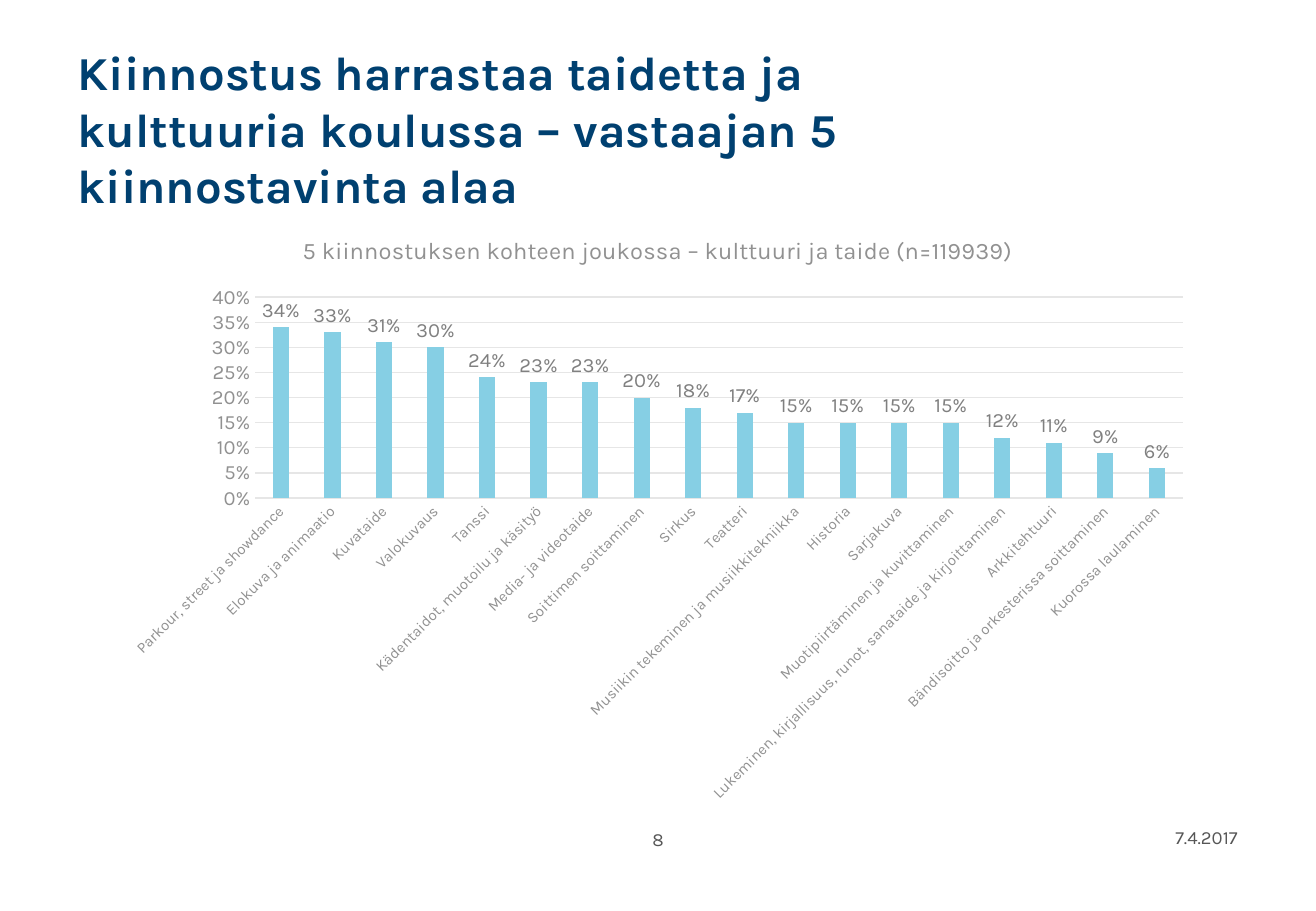
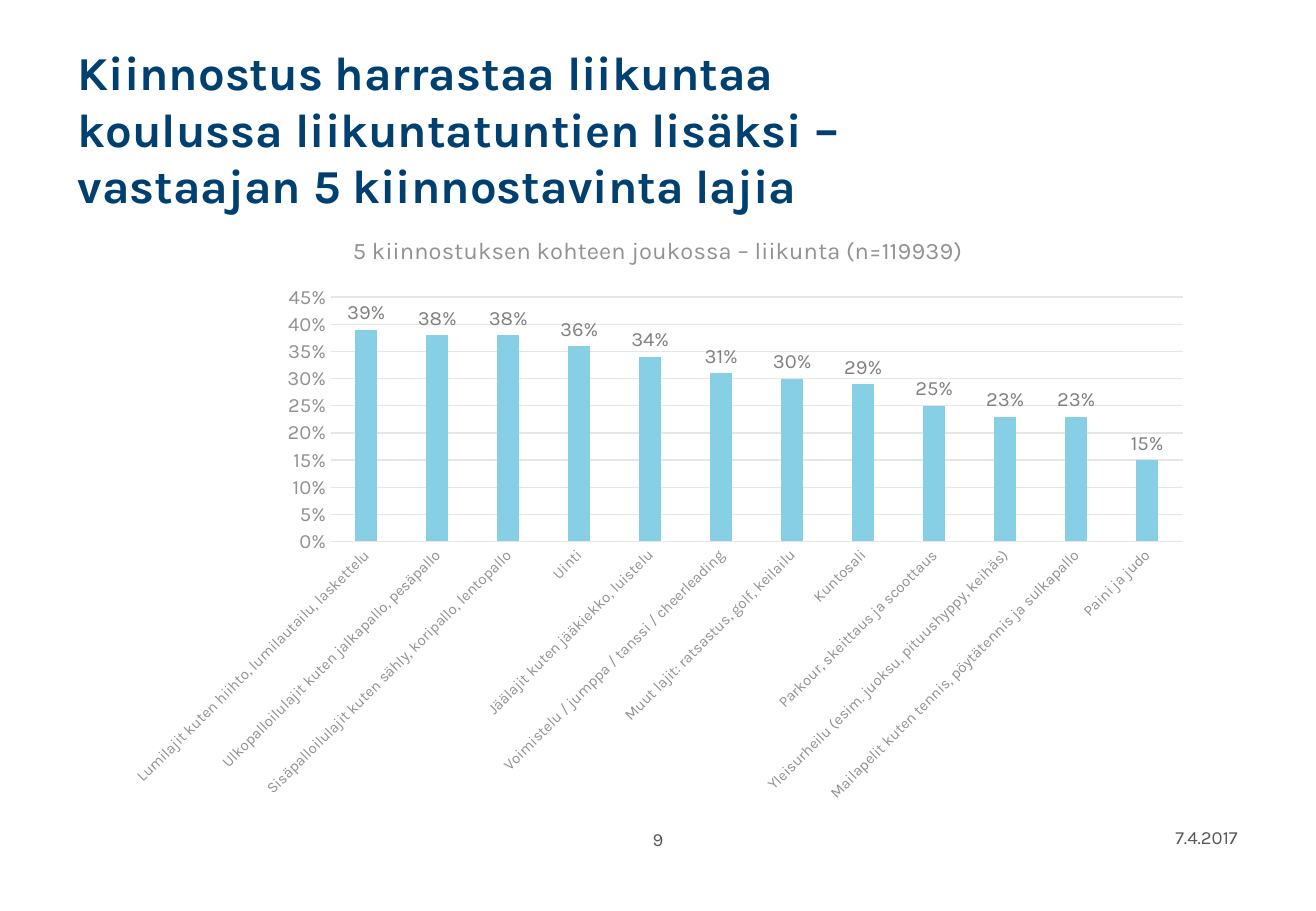
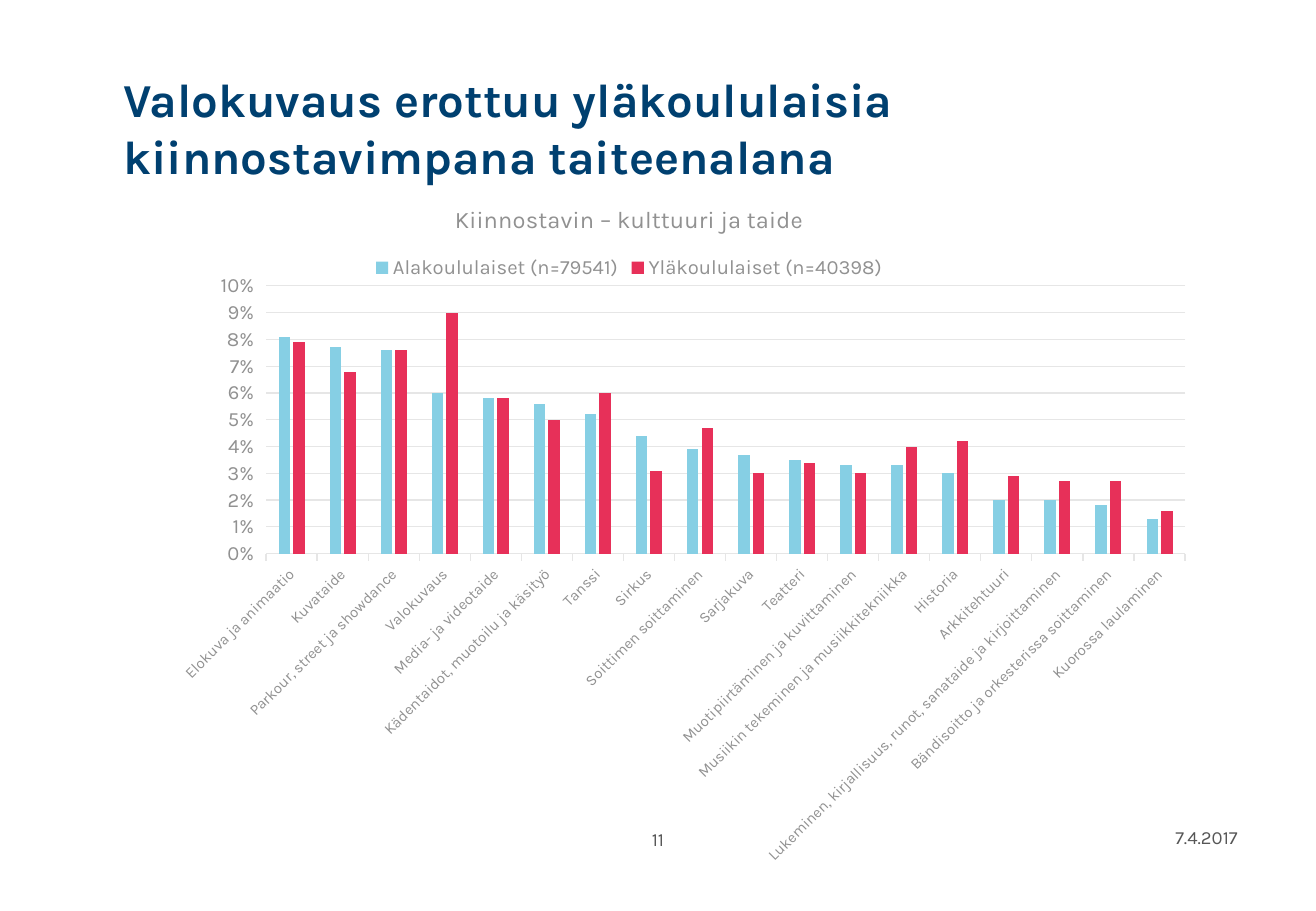
"""Build three slides of column charts on pupils' interest in culture, arts and sports."""
import pptx
import pptx.chart.data
import pptx.dml.color
import pptx.enum.chart
import pptx.enum.text
import pptx.oxml
import pptx.oxml.ns
import pptx.util

Pt = pptx.util.Pt
XL = pptx.enum.chart
ALIGN = pptx.enum.text.PP_ALIGN
ANCHOR = pptx.enum.text.MSO_ANCHOR

FONT = "Karla"
NAVY, TEXT, AXIS, LABEL, GRID = "004070", "565656", "919191", "808080", "E6E6E6"
SERIES_COLORS = ["86CFE4", "E73059"]
DATE = "7.4.2017"
PAGE_BOX = (299, 487.4, 182, 29)
DATE_BOX = (558.7, 486, 182, 29)

SLIDES = [
    {
        "title": "Kiinnostus harrastaa taidetta ja kulttuuria koulussa – vastaajan 5 kiinnostavinta alaa",
        "title_box": (39, 31, 546, 90),
        "page": "8",
        "chart_title": "5 kiinnostuksen kohteen joukossa – kulttuuri ja taide (n=119939)",
        "chart_box": (66, 126, 648, 356.4),
        "top": 0.4,
        "step": 0.05,
        "series": ["Osuus"],
        "rows": [
            ("Parkour, street ja showdance", 0.34),
            ("Elokuva ja animaatio", 0.33),
            ("Kuvataide", 0.31),
            ("Valokuvaus", 0.3),
            ("Tanssi", 0.24),
            ("Kädentaidot, muotoilu ja käsityö", 0.23),
            ("Media- ja videotaide", 0.23),
            ("Soittimen soittaminen", 0.2),
            ("Sirkus", 0.18),
            ("Teatteri", 0.17),
            ("Musiikin tekeminen ja musiikkitekniikka", 0.15),
            ("Historia", 0.15),
            ("Sarjakuva", 0.15),
            ("Muotipiirtäminen ja kuvittaminen", 0.15),
            ("Lukeminen, kirjallisuus, runot, sanataide ja kirjoittaminen", 0.12),
            ("Arkkitehtuuri", 0.11),
            ("Bändisoitto ja orkesterissa soittaminen", 0.09),
            ("Kuorossa laulaminen", 0.06),
        ],
    },
    {
        "title": "Kiinnostus harrastaa liikuntaa koulussa liikuntatuntien lisäksi – vastaajan 5 kiinnostavinta lajia",
        "title_box": (39, 31, 546, 90),
        "page": "9",
        "chart_title": "5 kiinnostuksen kohteen joukossa – liikunta (n=119939)",
        "chart_box": (66, 126, 648, 356.4),
        "top": 0.45,
        "step": 0.05,
        "series": ["Osuus"],
        "rows": [
            ("Lumilajit kuten hiihto, lumilautailu, laskettelu", 0.39),
            ("Ulkopalloilulajit kuten jalkapallo, pesäpallo", 0.38),
            ("Sisäpalloilulajit kuten sähly, koripallo, lentopallo", 0.38),
            ("Uinti", 0.36),
            ("Jäälajit kuten jääkiekko, luistelu", 0.34),
            ("Voimistelu / jumppa / tanssi / cheerleading", 0.31),
            ("Muut lajit: ratsastus, golf, keilailu", 0.3),
            ("Kuntosali", 0.29),
            ("Parkour, skeittaus ja scoottaus", 0.25),
            ("Yleisurheilu (esim. juoksu, pituushyppy, keihäs)", 0.23),
            ("Mailapelit kuten tennis, pöytätennis ja sulkapallo", 0.23),
            ("Paini ja judo", 0.15),
        ],
    },
    {
        "title": "Valokuvaus erottuu yläkoululaisia kiinnostavimpana taiteenalana",
        "title_box": (66, 30.2, 504, 90),
        "page": "11",
        "chart_title": "Kiinnostavin – kulttuuri ja taide",
        "chart_box": (32.4, 106.6, 681, 408.2),
        "plot_area": {"x": 0.184, "y": 0.154, "w": 0.8, "h": 0.389},
        "top": 0.1,
        "step": 0.01,
        "series": ["Alakoululaiset (n=79541)", "Yläkoululaiset (n=40398)"],
        "rows": [
            ("Elokuva ja animaatio", 0.081, 0.079),
            ("Kuvataide", 0.077, 0.068),
            ("Parkour, street ja showdance", 0.076, 0.076),
            ("Valokuvaus", 0.06, 0.09),
            ("Media- ja videotaide", 0.058, 0.058),
            ("Kädentaidot, muotoilu ja käsityö", 0.056, 0.05),
            ("Tanssi", 0.052, 0.06),
            ("Sirkus", 0.044, 0.031),
            ("Soittimen soittaminen", 0.039, 0.047),
            ("Sarjakuva", 0.037, 0.03),
            ("Teatteri", 0.035, 0.034),
            ("Muotipiirtäminen ja kuvittaminen", 0.033, 0.03),
            ("Musiikin tekeminen ja musiikkitekniikka", 0.033, 0.04),
            ("Historia", 0.03, 0.042),
            ("Arkkitehtuuri", 0.02, 0.029),
            ("Lukeminen, kirjallisuus, runot, sanataide ja kirjoittaminen", 0.02, 0.027),
            ("Bändisoitto ja orkesterissa soittaminen", 0.018, 0.027),
            ("Kuorossa laulaminen", 0.013, 0.016),
        ],
    },
]


def rgb(color):
    return pptx.dml.color.RGBColor.from_string(color)


def set_font(font, size, color, bold=False):
    font.name, font.size, font.bold = FONT, Pt(size), bold
    font.color.rgb = rgb(color)


def set_line(line, color):
    line.color.rgb = rgb(color)
    line.width = Pt(0.75)


def add_text(s, box, text, size, color, align=ALIGN.LEFT, anchor=ANCHOR.TOP, bold=False):
    tf = s.shapes.add_textbox(*map(Pt, box)).text_frame
    tf.word_wrap = True
    tf.vertical_anchor = anchor
    tf.text = text
    p = tf.paragraphs[0]
    p.alignment = align
    set_font(p.runs[0].font, size, color, bold)


def place_plot(chart, area):
    plot_area = chart.element.xpath("c:chart/c:plotArea")[0]
    for layout in plot_area.xpath("c:layout"):
        plot_area.remove(layout)
    parts = '<c:layoutTarget val="inner"/><c:xMode val="edge"/><c:yMode val="edge"/>'
    parts += "".join(f'<c:{name} val="{value}"/>' for name, value in area.items())
    plot_area.insert(0, pptx.oxml.parse_xml(
        f'<c:layout {pptx.oxml.ns.nsdecls("c")}><c:manualLayout>{parts}</c:manualLayout></c:layout>'))


def style_axes(chart, top, step, tick):
    cat, val = chart.category_axis, chart.value_axis
    for axis, size in ((cat, 9), (val, 12)):
        axis.major_tick_mark = tick
        axis.minor_tick_mark = XL.XL_TICK_MARK.NONE
        set_font(axis.tick_labels.font, size, AXIS)
    cat.has_major_gridlines = False
    set_line(cat.format.line, GRID)
    for body in chart.element.xpath(".//c:catAx/c:txPr/a:bodyPr"):
        body.set("rot", "-2700000")
        body.set("vert", "horz")
    val.minimum_scale, val.maximum_scale, val.major_unit = 0, top, step
    val.tick_labels.number_format = "0%"
    val.tick_labels.number_format_is_linked = False
    val.format.line.fill.background()
    val.has_major_gridlines = True
    set_line(val.major_gridlines.format.line, GRID)


def add_columns(s, content):
    names, columns = content["series"], list(zip(*content["rows"]))
    data = pptx.chart.data.CategoryChartData(number_format="0%")
    data.categories = columns[0]
    for name, values in zip(names, columns[1:]):
        data.add_series(name, values)
    chart = s.shapes.add_chart(
        XL.XL_CHART_TYPE.COLUMN_CLUSTERED, *map(Pt, content["chart_box"]), data).chart
    set_font(chart.font, 10, TEXT)

    chart.has_title = True
    tf = chart.chart_title.text_frame
    tf.text = content["chart_title"]
    set_font(tf.paragraphs[0].runs[0].font, 14, AXIS)
    chart.chart_title.include_in_layout = False

    plot = chart.plots[0]
    plot.gap_width, plot.overlap, plot.vary_by_categories = 219, -27, False
    for series, color in zip(plot.series, SERIES_COLORS):
        series.format.fill.solid()
        series.format.fill.fore_color.rgb = rgb(color)

    compared = len(names) > 1
    chart.has_legend = compared
    if compared:
        chart.legend.position = XL.XL_LEGEND_POSITION.TOP
        chart.legend.include_in_layout = False
        set_font(chart.legend.font, 12, AXIS)
    else:
        plot.has_data_labels = True
        labels = plot.data_labels
        labels.show_value = True
        labels.position = XL.XL_LABEL_POSITION.OUTSIDE_END
        labels.number_format, labels.number_format_is_linked = "0%", False
        set_font(labels.font, 12, LABEL)

    tick = XL.XL_TICK_MARK.OUTSIDE if compared else XL.XL_TICK_MARK.NONE
    style_axes(chart, content["top"], content["step"], tick)
    if "plot_area" in content:
        place_plot(chart, content["plot_area"])


def main():
    prs = pptx.Presentation()
    prs.slide_width, prs.slide_height = Pt(780), Pt(540)
    for content in SLIDES:
        s = prs.slides.add_slide(prs.slide_layouts[6])
        add_text(s, content["title_box"], content["title"], 28, NAVY,
                 anchor=ANCHOR.MIDDLE, bold=True)
        add_columns(s, content)
        add_text(s, PAGE_BOX, content["page"], 11, TEXT, ALIGN.CENTER)
        add_text(s, DATE_BOX, DATE, 11, TEXT, ALIGN.RIGHT)
    prs.save("out.pptx")


if __name__ == "__main__":
    main()
